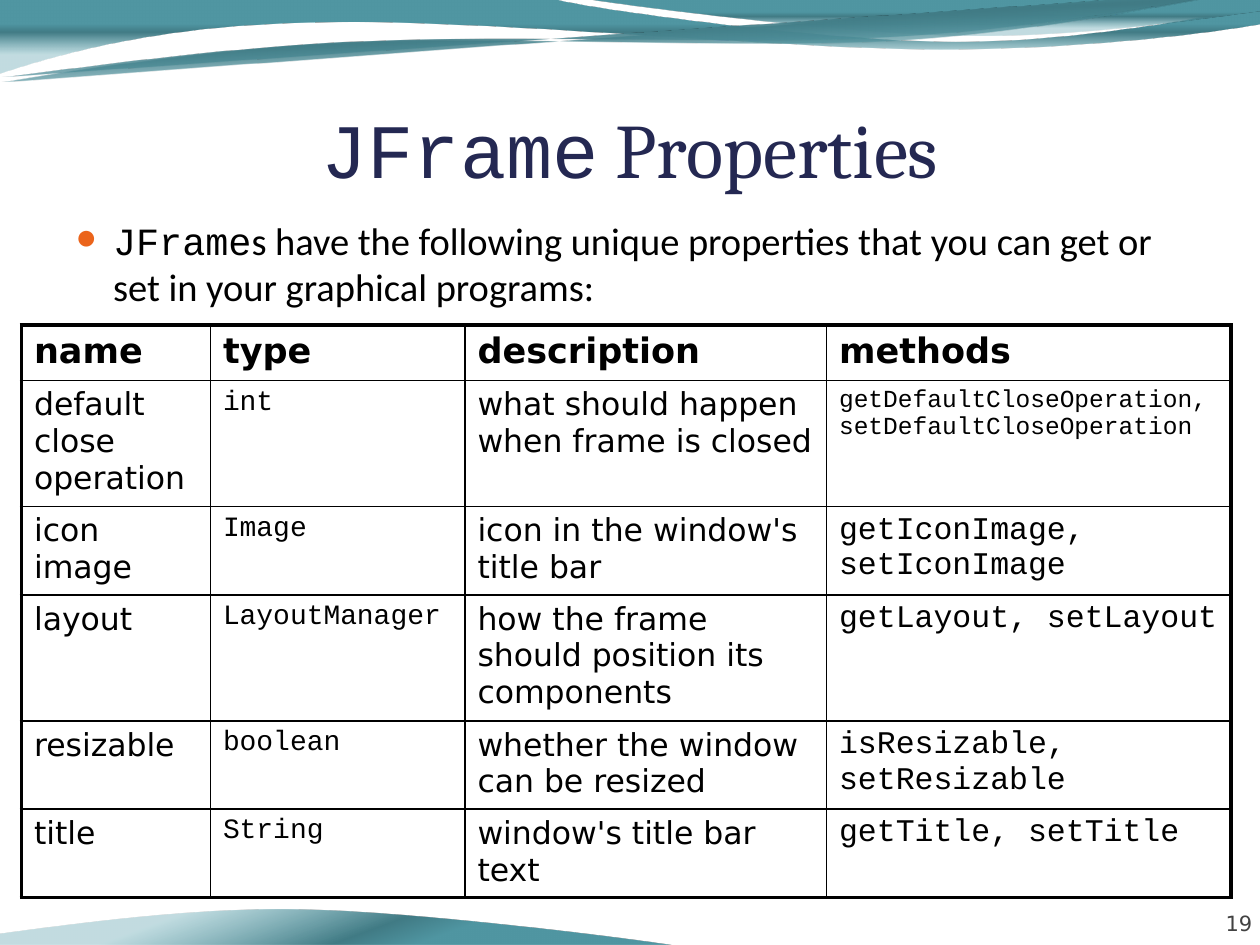
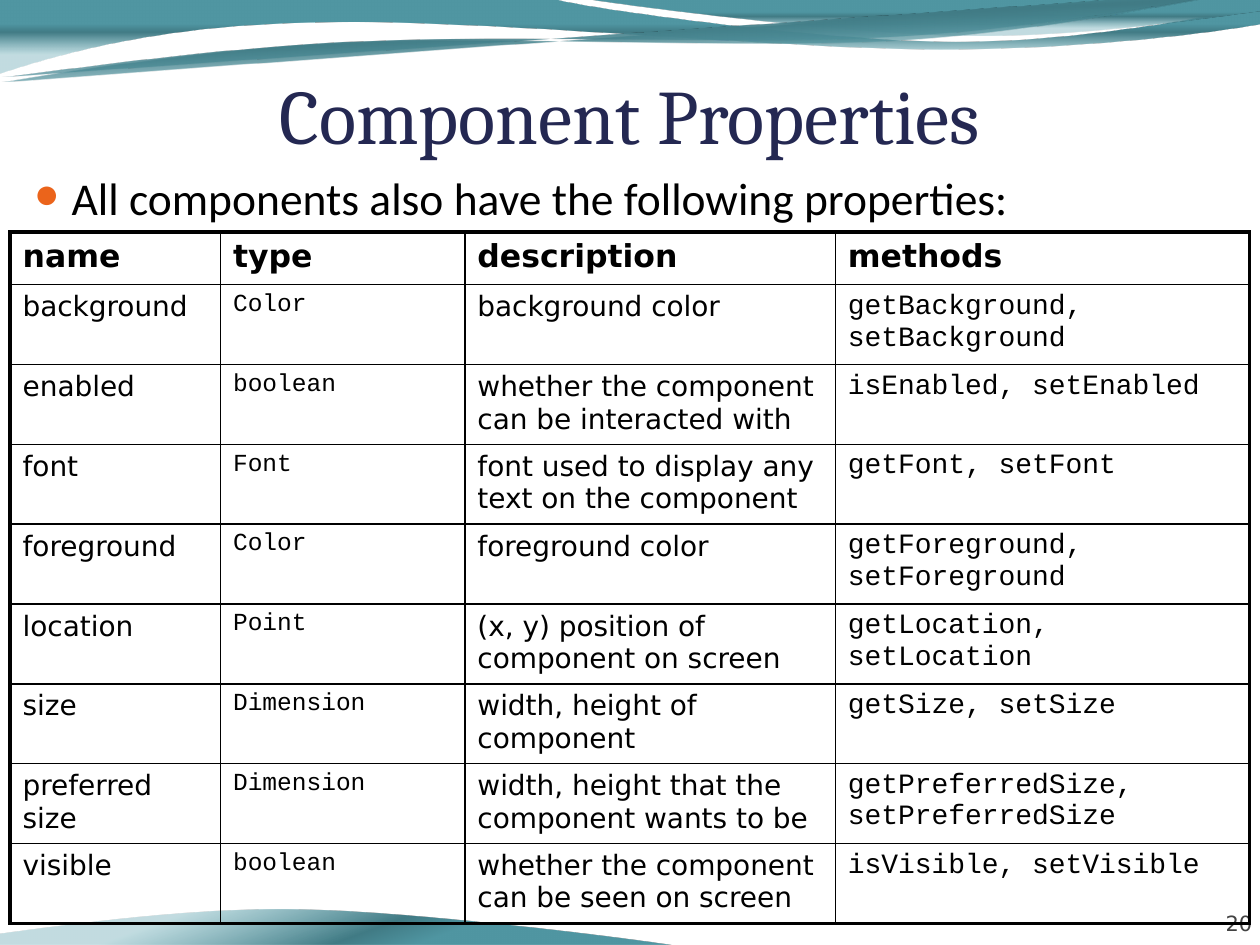
import math
from dataclasses import dataclass

from lxml import etree
from pptx import Presentation
from pptx import util as u
from pptx.dml.color import RGBColor
from pptx.enum import text
from pptx.oxml import ns

Inches = u.Inches


@dataclass(frozen=True)
class Theme:
    # Colours
    title: str = "242852"
    ink: str = "000000"
    number: str = "424242"
    bullet: str = "EB641B"
    # Gradient stops of the waves: position %, colour, opacity %
    wave: tuple = ((33, "5096A2", 100), (44, "417B85", 100), (74, "5AA2AE", 37))
    # Fonts
    head_font: str = "Cambria"
    body_font: str = "Calibri"
    cell_font: str = "DejaVu Sans"
    code_font: str = "Courier New"
    # Type sizes and line widths in points
    title_size: int = 44
    number_size: int = 12
    outer_line: float = 2.25
    inner_line: float = 1


# Waves: rotation, gradient angle, closed or open, centre, start point, then
# segments of one point (line) or three points (cubic curve)
WAVES = [
    (0, 90, True, (5, 0.29), (0, 0), [
        [(4.4, 0)],
        [(4.76, 0.09), (6.64, 0.33), (7.58, 0.33)],
        [(8.53, 0.33), (9.58, 0.14), (10, 0.05)],
        [(10.01, 0.19)],
        [(9.83, 0.23), (8.7, 0.39), (7.46, 0.39)],
        [(6.22, 0.39), (3.82, 0.15), (2.57, 0.18)],
        [(1.29, 0.19), (0.46, 0.43), (-0.01, 0.58)],
        [(0, 0)]]),
    (0, 90, True, (7.33, 0.15), (4.67, 0), [
        [(4.98, 0.05), (6.74, 0.27), (7.63, 0.28)],
        [(8.52, 0.3), (9.61, 0.14), (10, 0.09)],
        [(10, 0)],
        [(4.67, 0)]]),
    (-2.7, 90, False, (5.01, 0.3), (0.01, 0.65), [
        [(0.5, 0.57), (1.6, 0.39), (2.79, 0.34)],
        [(3.98, 0.28), (5.93, 0.39), (7.14, 0.32)],
        [(8.34, 0.25), (9.41, 0), (10, -0.08)]]),
    (-2.7, 90, False, (5, 0.28), (0.01, 0.61), [
        [(0.49, 0.56), (1.66, 0.38), (2.85, 0.33)],
        [(4.04, 0.27), (5.97, 0.36), (7.16, 0.29)],
        [(8.36, 0.22), (9.41, -0.01), (10, -0.08)]]),
    (180, 70, True, (2.66, 7.35), (5.32, 7.5), [
        [(5.01, 7.45), (3.25, 7.23), (2.36, 7.22)],
        [(1.47, 7.2), (0.38, 7.36), (-0.01, 7.41)],
        [(-0.01, 7.5)],
        [(5.32, 7.5)]]),
]

HEADINGS = ("name", "type", "description", "methods")

FRAME_ROWS = [
    ("default close operation", "int", "what should happen when frame is closed",
     "getDefaultCloseOperation, setDefaultCloseOperation"),
    ("icon image", "Image", "icon in the window's title bar",
     "getIconImage, setIconImage"),
    ("layout", "LayoutManager", "how the frame should position its components",
     "getLayout, setLayout"),
    ("resizable", "boolean", "whether the window can be resized",
     "isResizable, setResizable"),
    ("title", "String", "window's title bar text", "getTitle, setTitle"),
]

COMPONENT_ROWS = [
    ("background", "Color", "background color", "getBackground, setBackground"),
    ("enabled", "boolean", "whether the component can be interacted with",
     "isEnabled, setEnabled"),
    ("font", "Font", "font used to display any text on the component",
     "getFont, setFont"),
    ("foreground", "Color", "foreground color", "getForeground, setForeground"),
    ("location", "Point", "(x, y) position of component on screen",
     "getLocation, setLocation"),
    ("size", "Dimension", "width, height of component", "getSize, setSize"),
    ("preferred size", "Dimension", "width, height that the component wants to be",
     "getPreferredSize, setPreferredSize"),
    ("visible", "boolean", "whether the component can be seen on screen",
     "isVisible, setVisible"),
]


def add_xml(parent, tag, **attrs):
    return etree.SubElement(parent, ns.qn(tag), {k: str(v) for k, v in attrs.items()})


def turn_back(point, centre, degrees):
    """Where a point lies before its shape is rotated, in EMU."""
    a = math.radians(-degrees)
    dx, dy = point[0] - centre[0], point[1] - centre[1]
    return (Inches(centre[0] + dx * math.cos(a) - dy * math.sin(a)),
            Inches(centre[1] + dx * math.sin(a) + dy * math.cos(a)))


class Deck:
    def __init__(self, theme):
        self.theme = theme
        self.prs = Presentation()
        self.prs.slide_width, self.prs.slide_height = Inches(10), Inches(7.5)
        self.s = None

    def slide(self, number):
        self.s = self.prs.slides.add_slide(self.prs.slide_layouts[6])
        tf = self.box(9.11, 7.03, 0.83, 0.4, (0, 0, 0, 0), text.MSO_ANCHOR.BOTTOM)
        p = tf.paragraphs[0]
        p.alignment = text.PP_ALIGN.RIGHT
        self.run(p, str(number), self.theme.cell_font, self.theme.number_size,
                 self.theme.number)
        for wave in WAVES:
            self.wave(*wave)

    def wave(self, rotation, angle, closed, centre, start, segments):
        points = [turn_back(q, centre, rotation) for seg in segments for q in seg]
        builder = self.s.shapes.build_freeform(*turn_back(start, centre, rotation))
        builder.add_line_segments(points, close=closed)
        sp = builder.convert_to_shape()
        sp.rotation = rotation
        sp.shadow.inherit = False
        sp.line.fill.background()
        self.curve(sp, segments)
        self.wave_fill(sp, angle)

    def curve(self, sp, segments):
        """Join each three-point segment into one cubic curve."""
        lines = iter(list(sp.element.iter(ns.qn("a:lnTo"))))
        for segment in segments:
            group = [next(lines) for _ in segment]
            if len(group) == 3:
                cubic = etree.Element(ns.qn("a:cubicBezTo"))
                group[0].addprevious(cubic)
                for line in group:
                    cubic.append(line[0])
                    line.getparent().remove(line)

    def wave_fill(self, sp, angle):
        sp.fill.gradient()
        grad = sp.element.spPr.find(ns.qn("a:gradFill"))
        grad.set("rotWithShape", "1")
        for child in list(grad):
            grad.remove(child)
        stops = add_xml(grad, "a:gsLst")
        for position, color, opacity in self.theme.wave:
            stop = add_xml(stops, "a:gs", pos=position * 1000)
            clr = add_xml(stop, "a:srgbClr", val=color)
            if opacity < 100:
                add_xml(clr, "a:alpha", val=opacity * 1000)
        add_xml(grad, "a:lin", ang=angle * 60000, scaled=0)

    def box(self, left, top, width, height, insets, anchor=text.MSO_ANCHOR.TOP):
        sp = self.s.shapes.add_textbox(*map(Inches, (left, top, width, height)))
        tf = sp.text_frame
        tf.word_wrap = True
        tf.vertical_anchor = anchor
        (tf.margin_left, tf.margin_top,
         tf.margin_right, tf.margin_bottom) = map(Inches, insets)
        return tf

    def run(self, p, words, font, size, color, bold=False):
        r = p.add_run()
        r.text = words
        r.font.name, r.font.size, r.font.bold = font, u.Pt(size), bold
        r.font.color.rgb = RGBColor.from_string(color)

    def title(self, top, runs):
        tf = self.box(0.5, top, 9, 0.77, (0, 0.05, 0, 0), text.MSO_ANCHOR.BOTTOM)
        p = tf.paragraphs[0]
        p.alignment = text.PP_ALIGN.CENTER
        for words, font in runs:
            self.run(p, words, font, self.theme.title_size, self.theme.title)

    def bullet(self, left, top, width, height, size, runs):
        tf = self.box(left, top, width, height, (0.1, 0.05, 0.1, 0.05))
        p = tf.paragraphs[0]
        pPr = p._p.get_or_add_pPr()
        pPr.set("marL", str(Inches(0.3)))
        pPr.set("indent", str(Inches(-0.3)))
        add_xml(add_xml(pPr, "a:buClr"), "a:srgbClr", val=self.theme.bullet)
        add_xml(pPr, "a:buSzPct", val=95000)
        add_xml(pPr, "a:buFont", typeface=self.theme.code_font)
        add_xml(pPr, "a:buChar", char="●")
        for words, font in runs:
            self.run(p, words, font, size, self.theme.ink)

    def border(self, cell, sides):
        """Draw left, right, top and bottom lines; a true side is an outer edge."""
        tcPr = cell._tc.get_or_add_tcPr()
        for side, outer in zip("LRTB", sides):
            width = self.theme.outer_line if outer else self.theme.inner_line
            ln = add_xml(tcPr, f"a:ln{side}", w=u.Pt(width))
            add_xml(add_xml(ln, "a:solidFill"), "a:srgbClr", val=self.theme.ink)

    def cell_style(self, row, col, words, size):
        """Font, size and weight; the table's body text is `size` points."""
        if row == 0:
            return self.theme.cell_font, size + 2, True
        if col == 1:
            return self.theme.code_font, size - 2, False
        if col == 3:
            long_name = max(map(len, words.split())) > 20
            return self.theme.code_font, size - 4 if long_name else size, False
        return self.theme.cell_font, size, False

    def table(self, left, top, widths, heights, rows, size):
        grid = [HEADINGS, *rows]
        last_row, last_col = len(grid) - 1, len(HEADINGS) - 1
        frame = self.s.shapes.add_table(
            len(grid), len(HEADINGS),
            *map(Inches, (left, top, sum(widths), sum(heights))))
        tbl = frame.table
        tbl.first_row = tbl.horz_banding = False
        for col, width in enumerate(widths):
            tbl.columns[col].width = Inches(width)
        for row, (height, values) in enumerate(zip(heights, grid)):
            tbl.rows[row].height = Inches(height)
            for col, words in enumerate(values):
                cell = tbl.cell(row, col)
                font, points, bold = self.cell_style(row, col, words, size)
                self.run(cell.text_frame.paragraphs[0], words, font, points,
                         self.theme.ink, bold)
                self.border(cell, (col == 0, col == last_col,
                                   row == 0, row == last_row))
                cell.fill.background()


def main():
    theme = Theme()
    deck = Deck(theme)

    # JFrame properties
    deck.slide(19)
    deck.title(0.77, [("JFrame", theme.code_font), (" Properties", theme.head_font)])
    deck.bullet(0.5, 1.67, 9, 1.25, 22, [
        ("JFrame", theme.code_font),
        ("s have the following unique properties that you can get or set in your "
         "graphical programs:", theme.body_font)])
    deck.table(0.17, 2.58, (1.5, 2.02, 2.87, 3.21), (0.44, 1, 0.7, 1, 0.7, 0.7),
               FRAME_ROWS, 18)

    # Component properties
    deck.slide(20)
    deck.title(0.5, [("Component Properties", theme.head_font)])
    deck.bullet(0.17, 1.3, 9.99, 0.98, 26, [
        ("All components also have the following properties:", theme.body_font)])
    deck.table(0.08, 1.84, (1.67, 1.94, 2.94, 3.29),
               [0.42] + [0.63] * len(COMPONENT_ROWS), COMPONENT_ROWS, 16)

    deck.prs.save("out.pptx")


if __name__ == "__main__":
    main()
